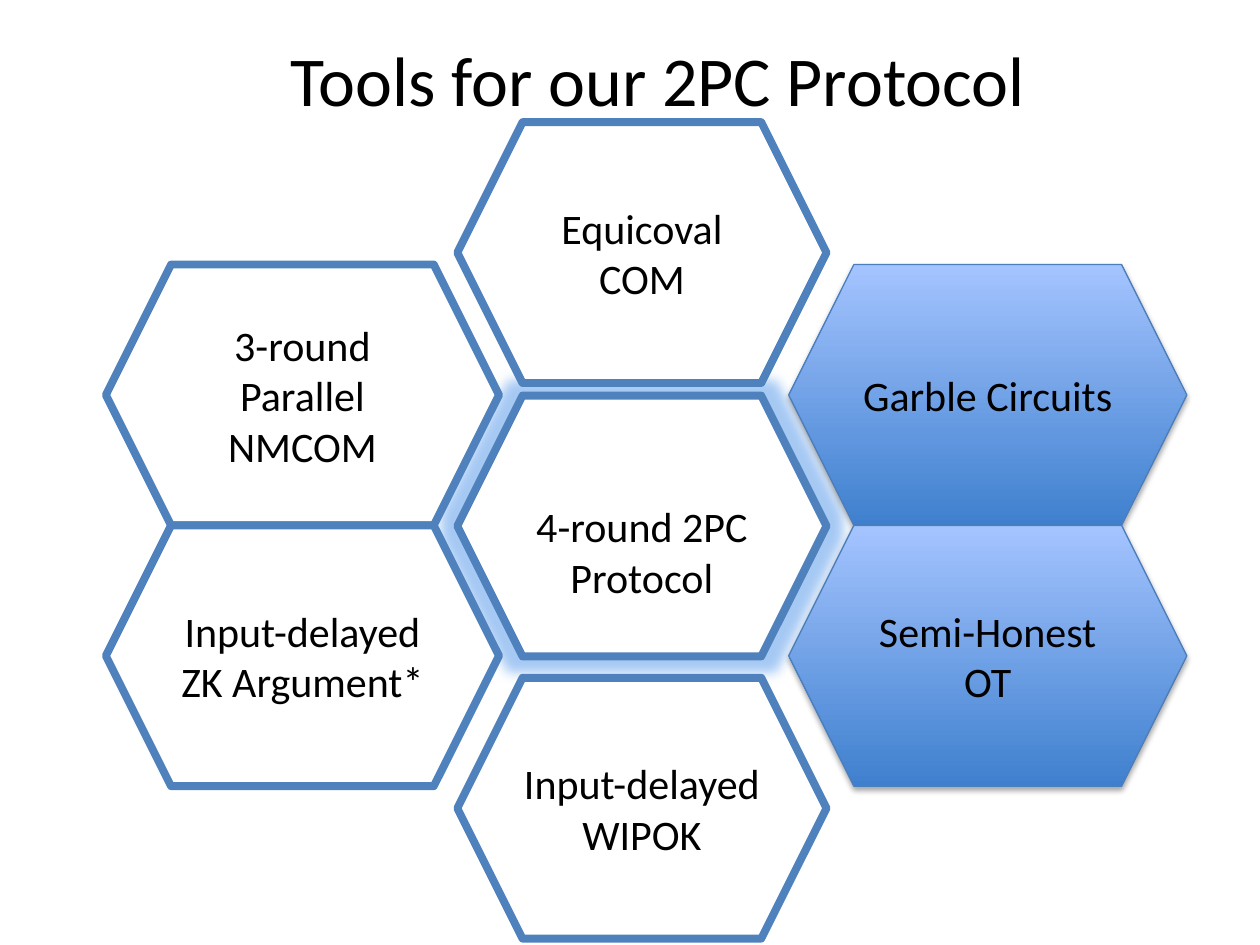
from lxml import etree
from pptx import Presentation
from pptx import util as u
from pptx.dml.color import RGBColor
from pptx.enum import shapes, text
from pptx.oxml.ns import qn

COLORS = {
    "ink": "000000",
    "paper": "FFFFFF",
    "outline": "4F81BD",
    "thin_outline": "4B7EBC",
    "gradient_bottom": "3F80CE",
    "gradient_top": "A4C4FF",
    "glow": "9CC3F3",
}
FONT = "Calibri"
CELL_HEIGHT = 2.07
# Left edge and width of each column of the honeycomb
COLUMNS = {"left": (0.84, 3.12), "middle": (3.63, 2.93), "right": (6.26, 3.16)}
SIDE_TOP = 2.1
SIDE_ROWS = [SIDE_TOP, SIDE_TOP + CELL_HEIGHT]
MIDDLE_ROWS = [0.97, 3.14, 5.38]


def color(name):
    return RGBColor.from_string(COLORS[name])


def format_text(frame, size):
    frame.word_wrap = True
    frame.vertical_anchor = text.MSO_ANCHOR.MIDDLE
    for paragraph in frame.paragraphs:
        paragraph.alignment = text.PP_ALIGN.CENTER
        for run in paragraph.runs:
            run.font.name = FONT
            run.font.size = u.Pt(size)
            run.font.color.rgb = color("ink")


def add_effect(shape, kind, color_name, alpha, **attributes):
    """Put a glow or an outer shadow into the shape's effect list."""
    effects = shape._element.spPr.find(qn("a:effectLst"))
    effect = etree.SubElement(effects, qn(f"a:{kind}"),
                              {key: str(value) for key, value in attributes.items()})
    tint = etree.SubElement(effect, qn("a:srgbClr"), val=COLORS[color_name])
    etree.SubElement(tint, qn("a:alpha"), val=str(alpha * 1000))


def add_hexagon(slide, column, top, label):
    left, width = COLUMNS[column]
    hexagon = slide.shapes.add_shape(
        shapes.MSO_SHAPE.HEXAGON,
        *(u.Inches(length) for length in (left, top, width, CELL_HEIGHT)))
    hexagon.shadow.inherit = False
    hexagon.text_frame.text = label
    format_text(hexagon.text_frame, 24)
    return hexagon


def add_outlined_hexagon(slide, column, top, label):
    hexagon = add_hexagon(slide, column, top, label)
    hexagon.fill.solid()
    hexagon.fill.fore_color.rgb = color("paper")
    hexagon.line.color.rgb = color("outline")
    hexagon.line.width = u.Pt(4.5)
    return hexagon


def add_shaded_hexagon(slide, column, top, label):
    hexagon = add_hexagon(slide, column, top, label)
    hexagon.fill.gradient()
    hexagon.fill.gradient_angle = 90
    stops = zip(hexagon.fill.gradient_stops, (0, 1), ("gradient_bottom", "gradient_top"))
    for stop, position, name in stops:
        stop.position = position
        stop.color.rgb = color(name)
    hexagon.line.color.rgb = color("thin_outline")
    hexagon.line.width = u.Pt(0.75)
    add_effect(hexagon, "outerShdw", "ink", 35, blurRad=u.Pt(3.1), dist=u.Pt(1.8),
               dir=90 * 60000, rotWithShape=0)


def add_title(slide, heading):
    title = slide.shapes.title
    title.left, title.top = u.Inches(0.72), 0
    title.width, title.height = u.Inches(9), u.Inches(1.25)
    title.text_frame.text = heading
    format_text(title.text_frame, 40)


def main():
    deck = Presentation()
    deck.slide_width, deck.slide_height = u.Inches(10), u.Inches(7.5)
    slide = deck.slides.add_slide(deck.slide_layouts[5])
    add_title(slide, "Tools for our 2PC Protocol")

    commitment_row, protocol_row, proof_row = MIDDLE_ROWS
    protocol = add_outlined_hexagon(slide, "middle", protocol_row, "4-round 2PC Protocol")
    protocol.text_frame.margin_top = u.Inches(0.45)
    add_effect(protocol, "glow", "glow", 90, rad=u.Pt(14))

    for top, label in zip(SIDE_ROWS, ("Garble Circuits", "Semi-Honest\nOT")):
        add_shaded_hexagon(slide, "right", top, label)
    for top, label in zip(SIDE_ROWS, ("3-round Parallel NMCOM", "Input-delayed ZK Argument*")):
        add_outlined_hexagon(slide, "left", top, label)
    add_outlined_hexagon(slide, "middle", commitment_row, "Equicoval COM")
    add_outlined_hexagon(slide, "middle", proof_row, "Input-delayed WIPOK")
    deck.save("out.pptx")


if __name__ == "__main__":
    main()
